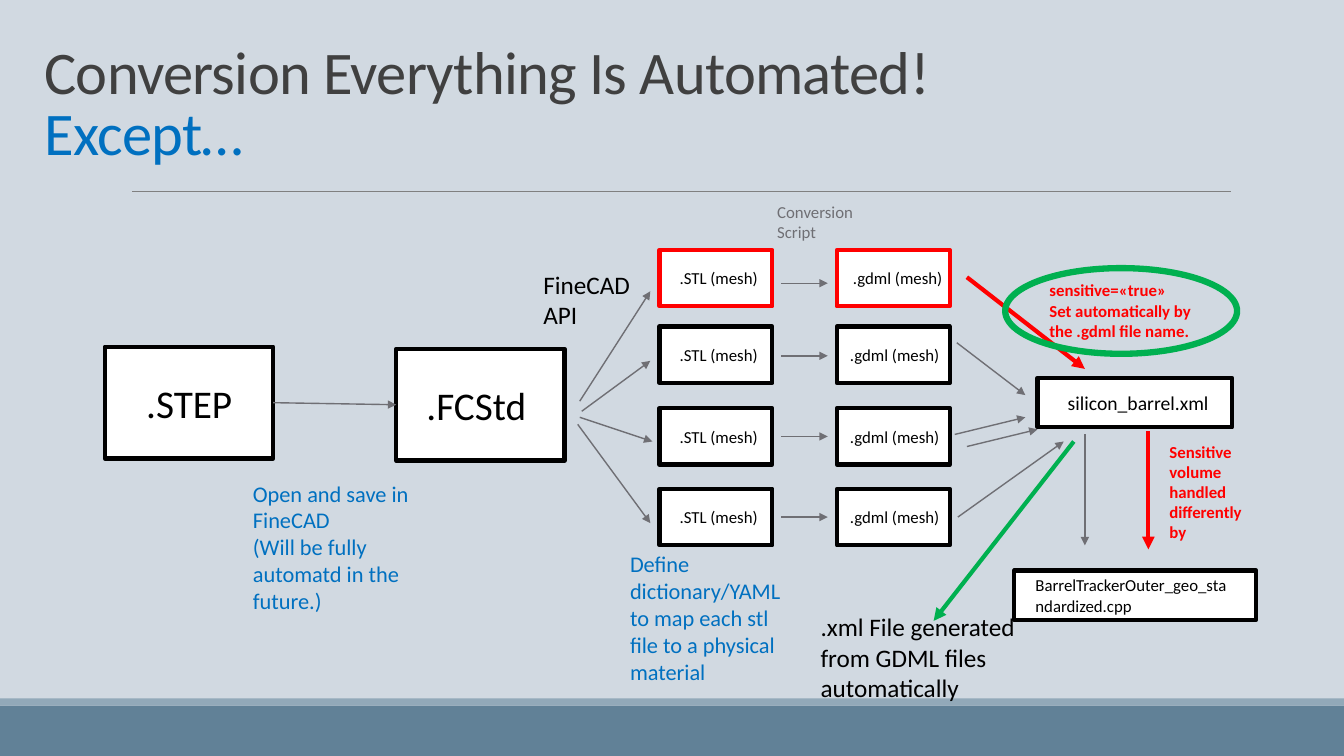
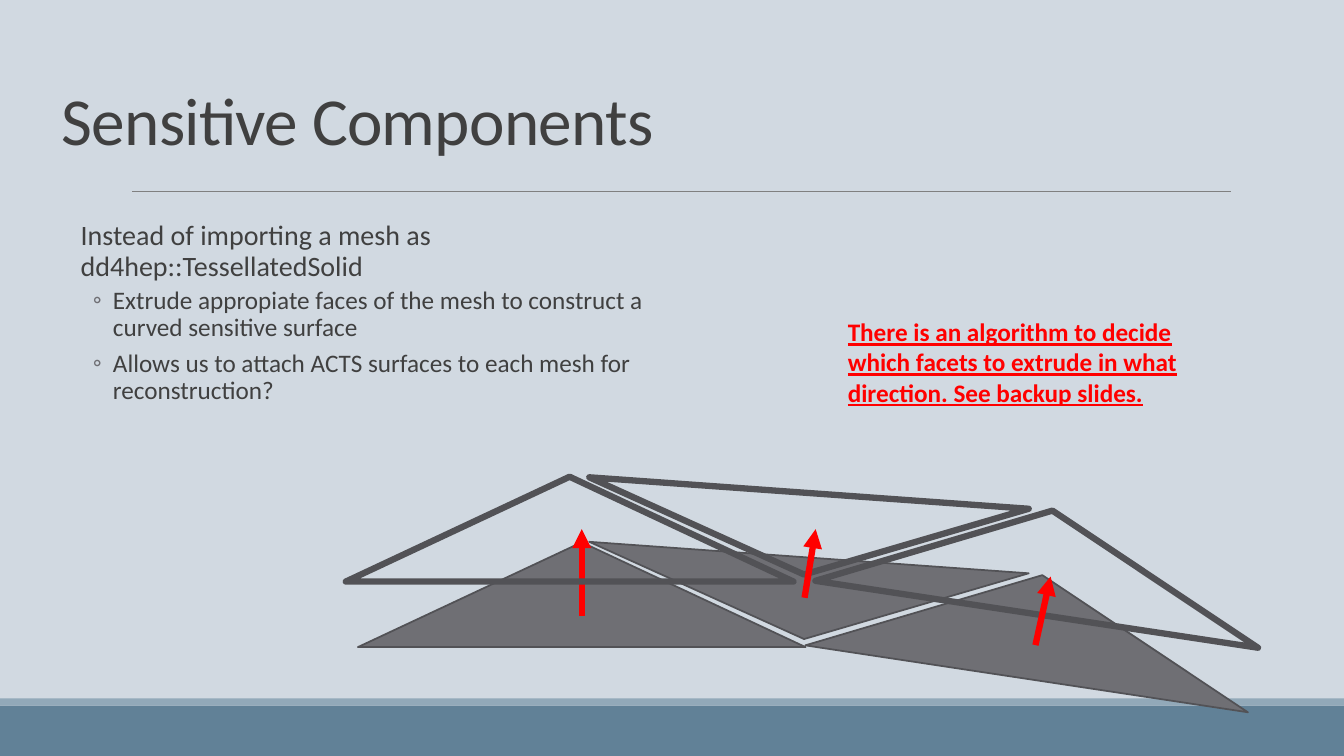
from dataclasses import dataclass
from typing import NamedTuple

from lxml import etree
from pptx import Presentation
from pptx.dml.color import RGBColor
from pptx.enum.shapes import MSO_CONNECTOR, MSO_SHAPE
from pptx.enum.text import MSO_ANCHOR, MSO_AUTO_SIZE, PP_ALIGN
from pptx.oxml.ns import qn
from pptx.util import Inches, Pt

RECTANGLE = MSO_SHAPE.RECTANGLE
OVAL = MSO_SHAPE.OVAL
TRIANGLE = MSO_SHAPE.ISOSCELES_TRIANGLE
STRAIGHT = MSO_CONNECTOR.STRAIGHT
TOP, MIDDLE, BOTTOM = MSO_ANCHOR.TOP, MSO_ANCHOR.MIDDLE, MSO_ANCHOR.BOTTOM
LEFT = PP_ALIGN.LEFT
NO_AUTOFIT = MSO_AUTO_SIZE.NONE
LEFT_SIDE, RIGHT_SIDE = 1, 3
TITLE_AND_BODY, TITLE_ONLY = 1, 5


# Theme
@dataclass(frozen=True)
class Theme:
    background: str = "D1D9E1"
    band: str = "618197"
    band_edge: str = "92A9B9"
    rule: str = "808080"
    ink: str = "404040"
    black: str = "000000"
    white: str = "FFFFFF"
    grey: str = "6F6F74"
    dark_grey: str = "525256"
    red: str = "FF0000"
    blue: str = "0070C0"
    green: str = "00B050"
    font: str = "Calibri"
    title: float = 48
    long_title: float = 43.2
    big: float = 28
    lead: float = 20
    text: float = 18
    note: float = 16
    medium: float = 14
    small: float = 12


THEME = Theme()


class Frame(NamedTuple):
    left: float
    top: float
    width: float
    height: float


class Arrow(NamedTuple):
    x1: float
    y1: float
    x2: float
    y2: float
    color: str = THEME.grey
    width: float = 1


class Label(NamedTuple):
    frame: Frame
    paragraphs: tuple[str, ...]
    size: float
    color: str = THEME.black
    bold: bool = False


class FileBox(NamedTuple):
    frame: Frame
    text: str
    size: float
    inset: float
    border: str = THEME.black
    right_inset: float = 0


class MeshRow(NamedTuple):
    top: float
    arrow_y: float
    gdml_inset: float = 0.13
    border: str = THEME.black


class Facet(NamedTuple):
    base: Frame
    raised: Frame
    rotation: float = 0
    apex: float = 0.5


# Drawing helpers
def write_text(paragraph, text: str, *, size: float, color: str = THEME.black,
               bold: bool = False, underline: bool = False,
               tracking: float = 0) -> None:
    run = paragraph.add_run()
    run.text = text
    run.font.name, run.font.size = THEME.font, Pt(size)
    run.font.color.rgb = RGBColor.from_string(color)
    run.font.bold, run.font.underline = bold, underline
    if tracking:
        run.font._element.set("spc", str(round(tracking * 100)))


def place(shape, frame: Frame) -> None:
    shape.left, shape.top, shape.width, shape.height = map(Inches, frame)


def add_label(slide, label: Label, **text_format) -> None:
    text_frame = slide.shapes.add_textbox(*map(Inches, label.frame)).text_frame
    text_frame.word_wrap = True
    for index, text in enumerate(label.paragraphs):
        paragraph = text_frame.add_paragraph() if index else text_frame.paragraphs[0]
        write_text(paragraph, text, size=label.size, color=label.color,
                   bold=label.bold, **text_format)


def add_figure(slide, kind, frame: Frame, *, fill: str = "", border: str = "",
               width: float = 1):
    figure = slide.shapes.add_shape(kind, *map(Inches, frame))
    figure.shadow.inherit = False
    if fill:
        figure.fill.solid()
        figure.fill.fore_color.rgb = RGBColor.from_string(fill)
    else:
        figure.fill.background()
    if border:
        figure.line.color.rgb = RGBColor.from_string(border)
        figure.line.width = Pt(width)
    else:
        figure.line.fill.background()
    return figure


def add_line(slide, line: Arrow, *, head: bool = True):
    connector = slide.shapes.add_connector(STRAIGHT, *map(Inches, line[:4]))
    connector.line.color.rgb = RGBColor.from_string(line.color)
    connector.line.width = Pt(line.width)
    properties = connector._element.spPr
    if head:
        etree.SubElement(properties.find(qn("a:ln")), qn("a:tailEnd"), type="triangle")
    etree.SubElement(properties, qn("a:effectLst"))
    return connector


def add_file_box(slide, box: FileBox):
    figure = add_figure(slide, RECTANGLE, box.frame, fill=THEME.white,
                        border=box.border, width=3)
    text_frame = figure.text_frame
    text_frame.word_wrap = True
    text_frame.vertical_anchor = MIDDLE
    text_frame.margin_left = Inches(box.inset)
    text_frame.margin_right = Inches(box.right_inset)
    text_frame.margin_top = text_frame.margin_bottom = 0
    text_frame.paragraphs[0].alignment = LEFT
    write_text(text_frame.paragraphs[0], box.text, size=box.size)
    return figure


def add_slide(deck, layout: int, title: str, title_frame: Frame, size: float,
              accent: str = ""):
    """Start a slide with the shared bands, rule and title."""
    slide = deck.slides.add_slide(deck.slide_layouts[layout])
    add_figure(slide, RECTANGLE, Frame(0, 7, 13.33, 0.5), fill=THEME.band)
    add_figure(slide, RECTANGLE, Frame(0, 6.93, 13.33, 0.07), fill=THEME.band_edge)
    add_line(slide, Arrow(1.31, 1.9, 12.21, 1.9, THEME.rule, 0.5), head=False)

    heading = slide.shapes.title
    place(heading, title_frame)
    heading.text_frame.auto_size = NO_AUTOFIT
    heading.text_frame.vertical_anchor = BOTTOM
    paragraph = heading.text_frame.paragraphs[0]
    paragraph.alignment, paragraph.line_spacing = LEFT, 0.85
    write_text(paragraph, title, size=size, color=THEME.ink, tracking=-0.5)
    if accent:
        paragraph.add_line_break()
        write_text(paragraph, accent, size=size, color=THEME.blue, tracking=-0.5)
    return slide


def add_point(paragraph, text: str, level: int) -> None:
    paragraph.level, paragraph.alignment = level, LEFT
    paragraph.line_spacing = 0.9
    paragraph.space_before = Pt(2 if level else 12)
    paragraph.space_after = Pt(4 if level else 2)
    properties = paragraph._element.get_or_add_pPr()
    properties.set("marL", str(Inches(0.42 if level else 0.1)))
    properties.set("indent", str(Inches(-0.2 if level else 0)))
    if level:
        bullet_color = etree.SubElement(properties, qn("a:buClr"))
        etree.SubElement(bullet_color, qn("a:srgbClr"), val=THEME.grey)
        etree.SubElement(properties, qn("a:buFont"), typeface=THEME.font)
        etree.SubElement(properties, qn("a:buChar"), char="◦")
    else:
        etree.SubElement(properties, qn("a:buNone"))
    write_text(paragraph, text, size=THEME.text if level else THEME.lead, color=THEME.ink)


# Slide 1: conversion workflow
STEP_BOX = FileBox(Frame(1.04, 3.44, 1.67, 1.11), ".STEP", THEME.big, 0.41)
FCSTD_BOX = FileBox(Frame(3.93, 3.46, 1.67, 1.11), ".FCStd", THEME.big, 0.3)
OUTPUT_BOXES = (
    FileBox(Frame(10.29, 3.75, 1.93, 0.49), "silicon_barrel.xml", THEME.medium, 0.3),
    FileBox(Frame(10.06, 5.66, 2.4, 0.49), "BarrelTrackerOuter_geo_standardized.cpp",
            THEME.small, 0.21, right_inset=0.21),
)
MESH_ROWS = (
    MeshRow(2.48, 2.81, 0.16, THEME.red),
    MeshRow(3.24, 3.53),
    MeshRow(4.05, 4.33),
    MeshRow(4.85, 5.13),
)
FLOW_ARROWS = (
    # from the FCStd file to each mesh
    Arrow(5.75, 3.98, 6.45, 2.89),
    Arrow(5.77, 4.08, 6.45, 3.58),
    Arrow(5.75, 4.14, 6.47, 4.38),
    Arrow(5.73, 4.21, 6.45, 5.19),
    # from each mesh to the barrel file
    Arrow(9.59, 2.75, 10.76, 3.66, THEME.red, 3),
    Arrow(9.49, 3.4, 10.17, 3.92),
    Arrow(9.47, 4.31, 10.17, 4.14),
    Arrow(9.59, 4.43, 10.29, 4.26),
    Arrow(9.5, 5.13, 10.55, 4.38),
    # from the barrel file onwards
    Arrow(10.76, 4.31, 10.76, 5.41),
    Arrow(11.39, 4.28, 11.39, 5.45, THEME.red, 3),
    Arrow(10.65, 4.38, 9.26, 6.16, THEME.green, 3),
)
WORKFLOW_LABELS = (
    Label(Frame(7.61, 1.95, 1.19, 0.5), ("Conversion Script",), THEME.small, THEME.grey),
    Label(Frame(10.31, 2.73, 1.92, 0.71),
          ("sensitive=«true»", "Set automatically by the .gdml file name."),
          THEME.small, THEME.red, True),
    Label(Frame(11.5, 4.33, 0.93, 1.11), ("Sensitive volume handled differently by",),
          THEME.small, THEME.red, True),
    Label(Frame(8.04, 6.02, 2.4, 1.01),
          (".xml File generated from GDML files automatically",), THEME.text),
    Label(Frame(2.41, 4.71, 1.89, 1.45),
          ("Open and save in FineCAD", "(Will be fully automatd in the future.)"),
          THEME.note, THEME.blue),
    Label(Frame(5.29, 2.62, 1.19, 0.71), ("FineCAD API",), THEME.text),
    Label(Frame(6.15, 5.41, 1.89, 1.45),
          ("Define dictionary/YAML to map each stl file to a physical material",),
          THEME.note, THEME.blue),
)


def build_workflow(deck) -> None:
    slide = add_slide(deck, TITLE_ONLY, "Conversion Everything Is Automated!",
                      Frame(0.34, 0.27, 11.5, 1.45), THEME.long_title, "Except…")
    step, fcstd = add_file_box(slide, STEP_BOX), add_file_box(slide, FCSTD_BOX)
    opening = add_line(slide, Arrow(2.71, 4, 3.93, 4.02))
    opening.begin_connect(step, RIGHT_SIDE)
    opening.end_connect(fcstd, LEFT_SIDE)
    for row in MESH_ROWS:
        for left, text, inset in ((6.54, ".STL (mesh)", 0.2),
                                  (8.3, ".gdml (mesh)", row.gdml_inset)):
            add_file_box(slide, FileBox(Frame(left, row.top, 1.12, 0.56), text,
                                        THEME.small, inset, row.border))
        add_line(slide, Arrow(7.75, row.arrow_y, 8.21, row.arrow_y))
    for box in OUTPUT_BOXES:
        add_file_box(slide, box)
    for arrow in FLOW_ARROWS:
        add_line(slide, arrow)
    for label in WORKFLOW_LABELS:
        add_label(slide, label)
    add_figure(slide, OVAL, Frame(9.97, 2.66, 2.3, 0.85), border=THEME.green, width=4.5)


# Slide 2: extruded mesh facets
POINTS = (
    ("Instead of importing a mesh as dd4hep::TessellatedSolid", 0),
    ("Extrude appropiate faces of the mesh to construct a curved sensitive surface", 1),
    ("Allows us to attach ACTS surfaces to each mesh for reconstruction?", 1),
)
FACETS = (
    Facet(Frame(3.55, 5.38, 4.44, 1.04), Frame(3.43, 4.73, 4.44, 1.04)),
    Facet(Frame(8.04, 5.7, 4.44, 1.04), Frame(8.14, 5.06, 4.44, 1.04), 8.6),
    Facet(Frame(5.81, 5.53, 4.37, 0.81), Frame(5.81, 4.89, 4.37, 0.81), 184.1, 0.498),
)
EXTRUSIONS = (
    Arrow(5.77, 6.11, 5.77, 5.25, THEME.red, 4.5),
    Arrow(7.98, 5.93, 8.09, 5.25, THEME.red, 4.5),
    Arrow(10.27, 6.4, 10.42, 5.72, THEME.red, 4.5),
)


def add_facet(slide, facet: Facet, *, raised: bool) -> None:
    triangle = add_figure(slide, TRIANGLE, facet.raised if raised else facet.base,
                          fill="" if raised else THEME.grey,
                          border=THEME.dark_grey, width=4.5 if raised else 1.25)
    triangle.rotation = facet.rotation
    triangle.adjustments[0] = facet.apex


def build_components(deck) -> None:
    slide = add_slide(deck, TITLE_AND_BODY, "Sensitive Components",
                      Frame(0.51, 0.18, 11.5, 1.45), THEME.title)
    body = slide.placeholders[1]
    place(body, Frame(0.7, 2.15, 6.01, 4.76))
    points = body.text_frame
    points.auto_size, points.vertical_anchor = NO_AUTOFIT, TOP
    points.margin_left = points.margin_right = 0
    for index, (text, level) in enumerate(POINTS):
        add_point(points.add_paragraph() if index else points.paragraphs[0], text, level)

    for facet in FACETS:
        add_facet(slide, facet, raised=False)
    add_line(slide, EXTRUSIONS[0])
    for facet in FACETS:
        add_facet(slide, facet, raised=True)
    for arrow in EXTRUSIONS[1:]:
        add_line(slide, arrow)
    add_label(slide, Label(
        Frame(8.31, 3.09, 3.85, 1.01),
        ("There is an algorithm to decide which facets to extrude in what direction. "
         "See backup slides.",), THEME.text, THEME.red, True), underline=True)


def main() -> None:
    deck = Presentation()
    deck.slide_width, deck.slide_height = Inches(13.33), Inches(7.5)
    backdrop = deck.slide_master.background.fill
    backdrop.solid()
    backdrop.fore_color.rgb = RGBColor.from_string(THEME.background)
    build_workflow(deck)
    build_components(deck)
    deck.save("out.pptx")


if __name__ == "__main__":
    main()
